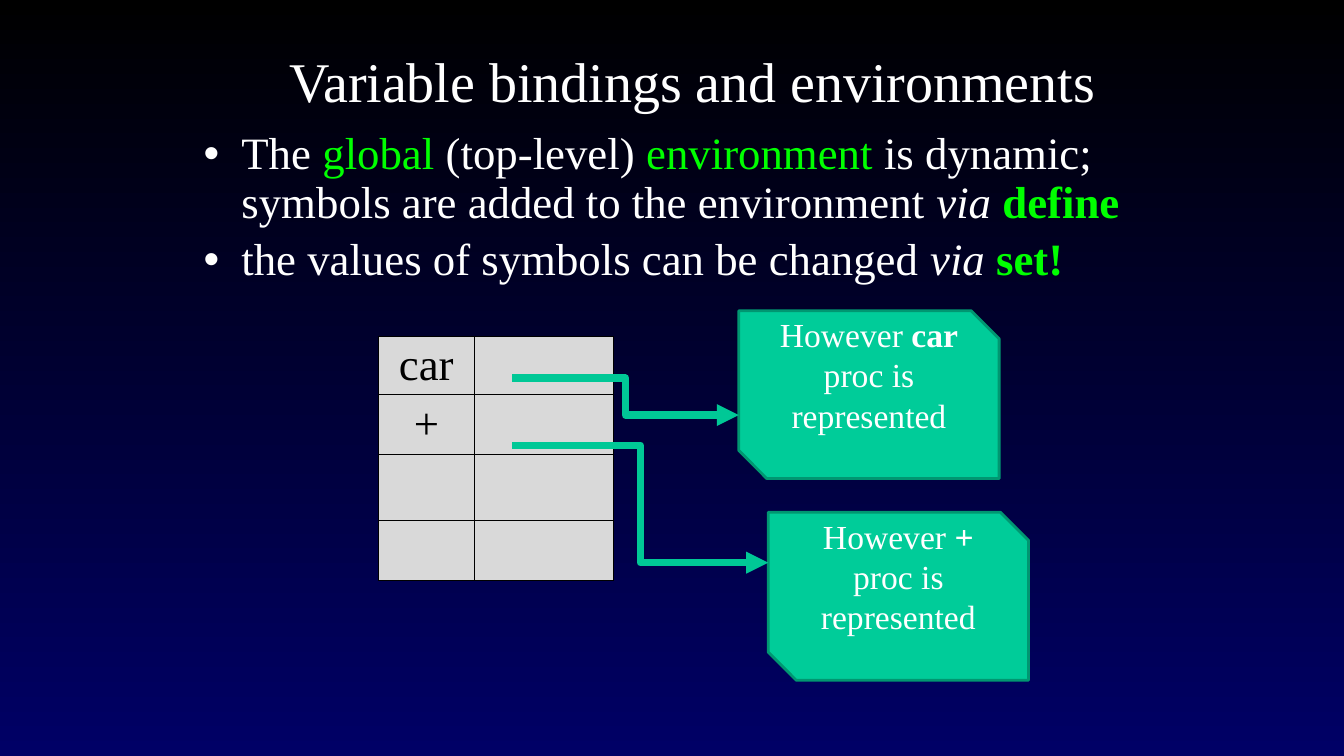
from lxml import etree
from pptx import Presentation
from pptx.dml.color import RGBColor
from pptx.enum.shapes import MSO_CONNECTOR, MSO_SHAPE
from pptx.enum.text import MSO_ANCHOR, MSO_AUTO_SIZE, PP_ALIGN
from pptx.oxml.ns import qn
from pptx.util import Cm, Pt

ELBOW = MSO_CONNECTOR.ELBOW
SNIPPED = MSO_SHAPE.SNIP_2_DIAG_RECTANGLE
MIDDLE, TOP = MSO_ANCHOR.MIDDLE, MSO_ANCHOR.TOP
NO_FIT = MSO_AUTO_SIZE.NONE
CENTER, LEFT = PP_ALIGN.CENTER, PP_ALIGN.LEFT

FONT = "Times New Roman"
COLORS = {
    "night": "000000",
    "navy": "000066",
    "text": "FFFFFF",
    "keyword": "00FF00",
    "cell": "D9D9D9",
    "cell_text": "000000",
    "border": "000000",
    "box": "00CC99",
    "box_line": "009771",
    "arrow": "00C896",
}


def color(name):
    return RGBColor.from_string(COLORS[name])


def paint_background(page):
    fill = page.background.fill
    fill.gradient()
    fill.gradient_angle = 270
    for stop, position, name in zip(fill.gradient_stops, (0, 1), ("night", "navy")):
        stop.position = position
        stop.color.rgb = color(name)


def place(shape, left, top, width, height):
    shape.left, shape.top = Cm(left), Cm(top)
    shape.width, shape.height = Cm(width), Cm(height)


def write_spans(para, spans, size):
    for text, name, style in spans:
        span = para.add_run()
        span.text = text
        span.font.name = FONT
        span.font.size = Pt(size)
        span.font.color.rgb = color(name)
        span.font.bold = style == "bold"
        span.font.italic = style == "italic"


def add_title(page, text):
    title = page.shapes.title
    place(title, 5.28, 0.84, 24.33, 2.34)
    frame = title.text_frame
    frame.auto_size = NO_FIT
    frame.vertical_anchor = MIDDLE
    para = frame.paragraphs[0]
    para.alignment = CENTER
    write_spans(para, [(text, "text", "")], 40)


def add_bullets(page, items):
    body = page.placeholders[1]
    place(body, 4.88, 3.18, 24.77, 13.77)
    frame = body.text_frame
    frame.auto_size = NO_FIT
    frame.vertical_anchor = TOP
    for index, spans in enumerate(items):
        para = frame.add_paragraph() if index else frame.paragraphs[0]
        properties = para._p.get_or_add_pPr()
        properties.set("marL", str(Cm(0.95)))
        properties.set("indent", str(-Cm(0.95)))
        etree.SubElement(properties, qn("a:buChar")).set("char", "•")
        para.alignment = LEFT
        para.line_spacing = 0.9
        para.space_before = Pt(6.4 if index else 0)
        write_spans(para, spans, 32)


def add_borders(cell):
    properties = cell._tc.get_or_add_tcPr()
    for side in ("a:lnL", "a:lnR", "a:lnT", "a:lnB"):
        line = etree.SubElement(properties, qn(side), w=str(Pt(1)))
        fill = etree.SubElement(line, qn("a:solidFill"))
        etree.SubElement(fill, qn("a:srgbClr"), val=COLORS["border"])


def add_bindings(page, symbols, widths, heights):
    frame = page.shapes.add_table(
        len(heights), len(widths), Cm(9.53), Cm(8.47),
        Cm(sum(widths)), Cm(sum(heights)))
    table = frame.table
    table.first_row = table.horz_banding = False
    for column, width in zip(table.columns, widths):
        column.width = Cm(width)
    for row, height in zip(table.rows, heights):
        row.height = Cm(height)
    for cell in table.iter_cells():
        add_borders(cell)
        cell.fill.solid()
        cell.fill.fore_color.rgb = color("cell")
        cell.margin_top = cell.margin_bottom = Cm(0.08)
        cell.vertical_anchor = MIDDLE
    for index, symbol in enumerate(symbols):
        para = table.cell(index, 0).text_frame.paragraphs[0]
        para.alignment = CENTER
        write_spans(para, [(symbol, "cell_text", "")], 32)


def add_procedure(page, left, top, symbol):
    box = page.shapes.add_shape(SNIPPED, Cm(left), Cm(top), Cm(6.56), Cm(4.23))
    box.shadow.inherit = False
    box.fill.solid()
    box.fill.fore_color.rgb = color("box")
    box.line.color.rgb = color("box_line")
    box.line.width = Pt(2)
    frame = box.text_frame
    frame.word_wrap = True
    frame.vertical_anchor = MIDDLE
    frame.margin_bottom = Cm(1.15)
    para = frame.paragraphs[0]
    para.alignment = CENTER
    write_spans(para, [("However ", "text", ""), (symbol, "text", "bold"),
                       (" proc is represented", "text", "")], 24)


def add_arrow(page, start, end):
    arrow = page.shapes.add_connector(ELBOW, *map(Cm, start + end))
    arrow.line.color.rgb = color("arrow")
    arrow.line.width = Pt(5.25)
    etree.SubElement(arrow.line._get_or_add_ln(), qn("a:tailEnd"), type="triangle")
    etree.SubElement(arrow._element.spPr, qn("a:effectLst"))


def main():
    deck = Presentation()
    deck.slide_width, deck.slide_height = Cm(33.87), Cm(19.05)
    page = deck.slides.add_slide(deck.slide_layouts[1])
    paint_background(page)
    add_title(page, "Variable bindings and environments")
    add_bullets(page, [
        [("The ", "text", ""), ("global", "keyword", ""),
         (" (top-level) ", "text", ""), ("environment", "keyword", ""),
         (" is dynamic; symbols are added to the environment ", "text", ""),
         ("via ", "text", "italic"), ("define", "keyword", "bold")],
        [("the values of symbols can be changed ", "text", ""),
         ("via ", "text", "italic"), ("set!", "keyword", "bold")],
    ])
    add_bindings(page, ["car", "+"], [2.43, 3.5], [1.48, 1.51, 1.66, 1.51])
    add_procedure(page, 18.62, 7.83, "car")
    add_procedure(page, 19.36, 12.91, "+")
    add_arrow(page, (12.91, 9.53), (18.62, 10.46))
    add_arrow(page, (12.91, 11.22), (19.36, 14.18))
    deck.save("out.pptx")


if __name__ == "__main__":
    main()
